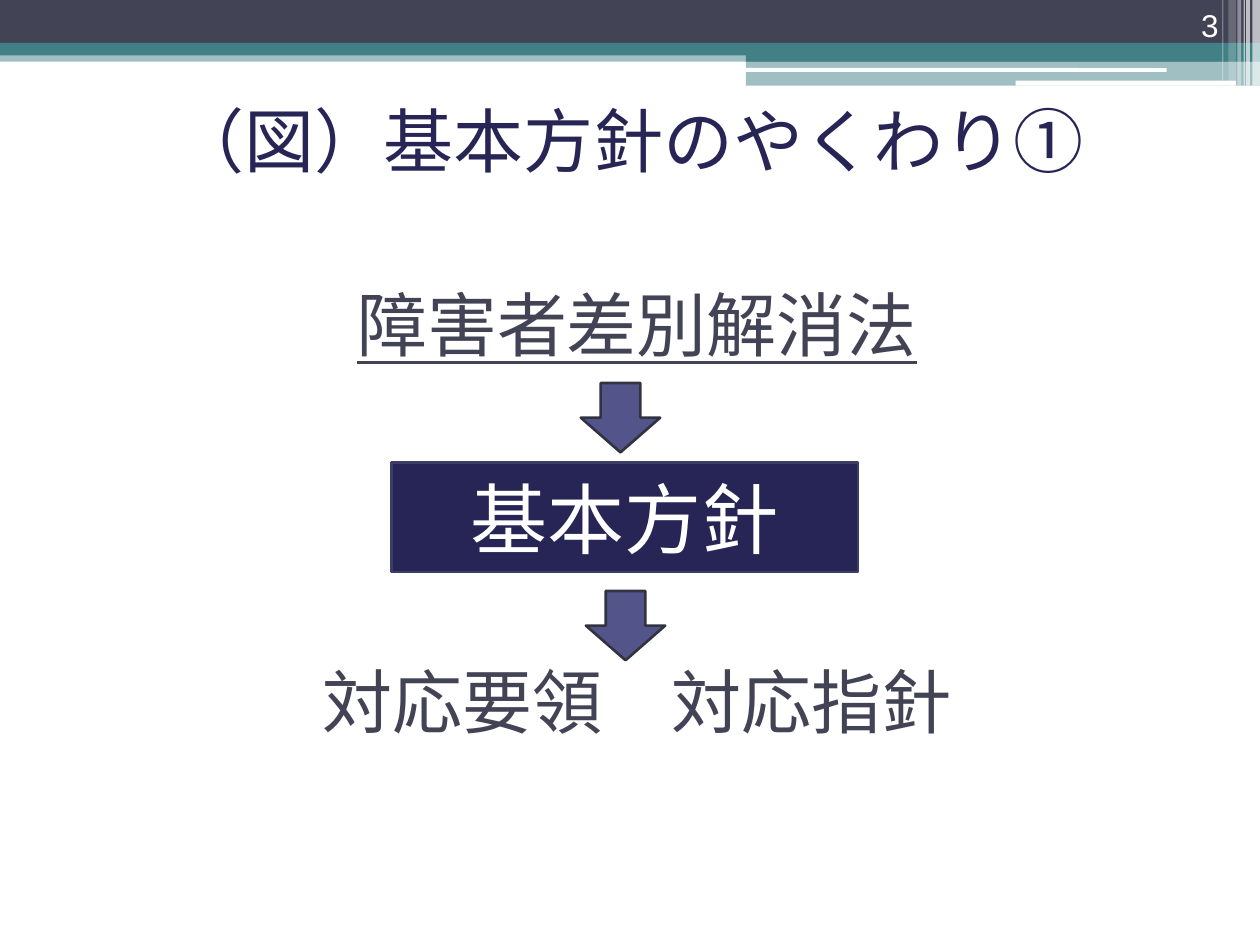
import pptx
import pptx.util
import pptx.dml.color
import pptx.enum.shapes
import pptx.enum.text
import pptx.oxml.ns
import lxml.etree

Inches = pptx.util.Inches
Shape = pptx.enum.shapes.MSO_SHAPE
Align = pptx.enum.text.PP_ALIGN
Anchor = pptx.enum.text.MSO_ANCHOR

COLORS = {
    "slate": "424456",
    "teal": "438086",
    "white": "FFFFFF",
    "navy": "272555",
    "navy_edge": "3D3E66",
    "violet": "53548A",
    "violet_edge": "323341",
}


class SlideBuilder:
    """Hold the style and the current slide, and add each kind of element."""

    font = "Arial"

    def __init__(self, deck):
        self.slide = deck.slides.add_slide(deck.slide_layouts[5])

    def color(self, name):
        return pptx.dml.color.RGBColor.from_string(COLORS[name])

    def label(self, shape, text, size, color, align=Align.CENTER,
              anchor=Anchor.MIDDLE, underline=None):
        frame = shape.text_frame
        frame.word_wrap = True
        frame.auto_size = pptx.enum.text.MSO_AUTO_SIZE.NONE
        frame.vertical_anchor = anchor
        para = frame.paragraphs[0]
        para.alignment = align
        span = para.add_run()
        span.text = text
        span.font.name = self.font
        span.font.size = pptx.util.Pt(size)
        span.font.color.rgb = self.color(color)
        span.font.underline = underline

    def title(self, text, left, top, width, height):
        title = self.slide.shapes.title
        title.left, title.top = Inches(left), Inches(top)
        title.width, title.height = Inches(width), Inches(height)
        self.label(title, text, 40, "navy")

    def text(self, text, left, top, width, height, size, color, **style):
        box = self.slide.shapes.add_textbox(
            Inches(left), Inches(top), Inches(width), Inches(height))
        self.label(box, text, size, color, **style)

    def shape(self, kind, left, top, width, height, fill, edge=None, opacity=100):
        shape = self.slide.shapes.add_shape(
            kind, Inches(left), Inches(top), Inches(width), Inches(height))
        shape.shadow.inherit = False
        shape.fill.solid()
        shape.fill.fore_color.rgb = self.color(fill)
        if opacity < 100:
            tone = shape.element.spPr.find(".//" + pptx.oxml.ns.qn("a:srgbClr"))
            alpha = lxml.etree.SubElement(tone, pptx.oxml.ns.qn("a:alpha"))
            alpha.set("val", str(opacity * 1000))
        if edge:
            shape.line.color.rgb = self.color(edge)
            shape.line.width = pptx.util.Pt(1.5)
        else:
            shape.line.fill.background()
        return shape

    def header(self):
        bands = [
            (0, 0.4, 10, 0.09, "teal", 50),
            (0, 0, 10, 0.34, "slate", 100),
            (0, 0.34, 10, 0.1, "teal", 100),
            (5.92, 0.39, 4.08, 0.1, "teal", 100),
            (5.92, 0.48, 4.08, 0.2, "teal", 50),
        ]
        for left, top, width, height, fill, opacity in bands:
            self.shape(Shape.RECTANGLE, left, top, width, height, fill, opacity=opacity)
        for left, top, width, height in [(5.91, 0.54, 3.35, 0.03), (8.06, 0.64, 1.75, 0.04)]:
            self.shape(Shape.ROUNDED_RECTANGLE, left, top, width, height, "white")
        stripes = [
            (9.94, 0.06, 0.68, 65),
            (9.89, 0.03, 0.68, 65),
            (9.87, 0.01, 0.68, 60),
            (9.82, 0.03, 0.68, 40),
            (9.75, 0.06, 0.64, 20),
            (9.7, 0.01, 0.64, 30),
        ]
        for left, width, height, opacity in stripes:
            self.shape(Shape.RECTANGLE, left, 0, width, height, "white", opacity=opacity)


def main():
    deck = pptx.Presentation()
    deck.slide_width, deck.slide_height = Inches(10), Inches(7.5)
    page = SlideBuilder(deck)
    page.header()
    page.title("（図）基本方針のやくわり①", 0.28, 0.68, 9.42, 0.86)
    page.text("3", 8.94, 0, 0.83, 0.4, 18, "white", align=Align.RIGHT, anchor=Anchor.BOTTOM)
    page.text("障害者差別解消法", 0.33, 2.17, 9.45, 0.8, 40, "slate", underline=True)
    page.text("対応要領　対応指針", 0.33, 5.16, 9.45, 0.8, 40, "slate")
    policy = page.shape(Shape.RECTANGLE, 3.11, 3.67, 3.7, 0.87, "navy", "navy_edge")
    page.label(policy, "基本方針", 44, "white")
    for left, top in [(4.61, 3.04), (4.65, 4.69)]:
        page.shape(Shape.DOWN_ARROW, left, top, 0.63, 0.55, "violet", "violet_edge")
    deck.save("out.pptx")


if __name__ == "__main__":
    main()
